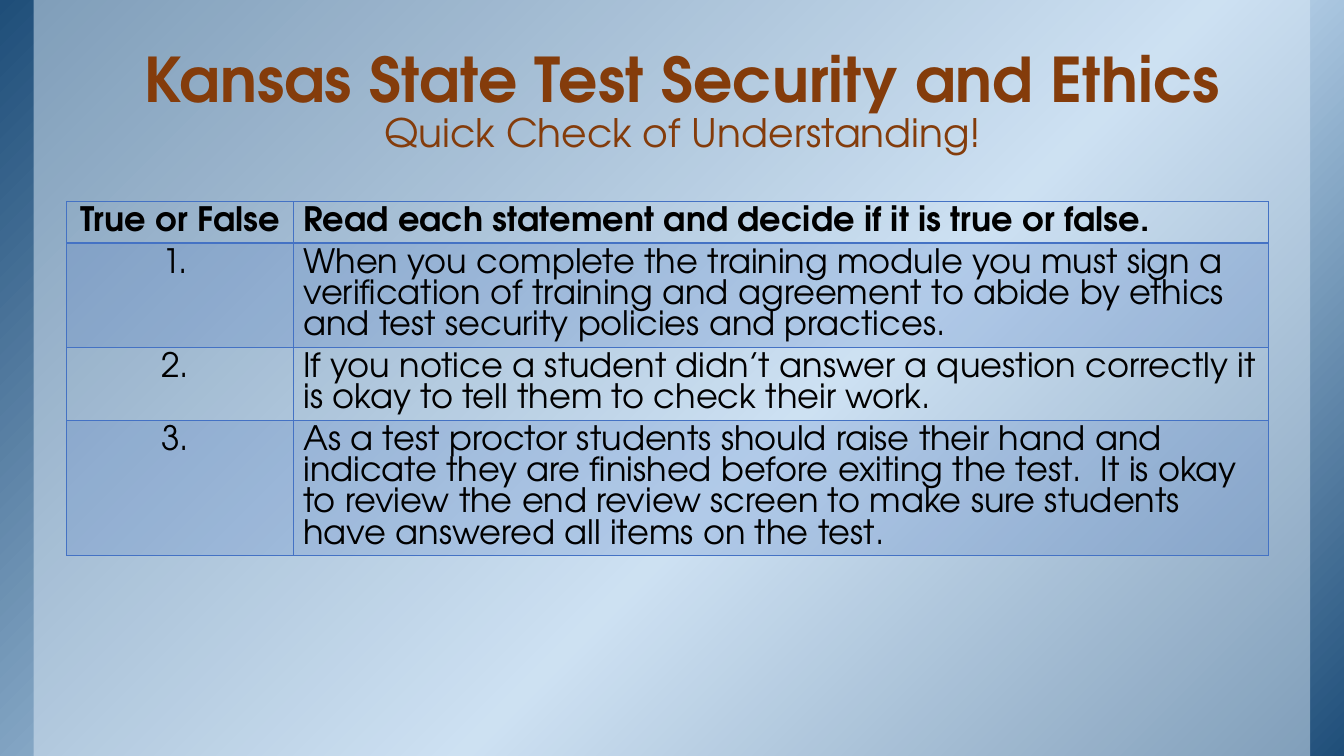
from dataclasses import dataclass

from lxml import etree
from pptx import Presentation
from pptx import util as u
from pptx.dml.color import RGBColor
from pptx.enum import shapes, text
from pptx.oxml import ns


@dataclass(frozen=True)
class Theme:
    font: str = "TeX Gyre Adventor"
    title: str = "843C0B"
    body: str = "000000"
    accent: str = "4472C4"
    panel: str = "DEEBF7"
    gradient: tuple = ((0, "1F4E79"), (58, "BDD7EE"), (100, "1F4E79"))
    title_size: int = 44
    subtitle_size: int = 28
    body_size: int = 24
    body_leading: float = 22.4


THEME = Theme()
HEADER = ("True or False", "Read each statement and decide if it is true or false.")
STATEMENTS = (
    "When you complete the training module you must sign a verification of training "
    "and agreement to abide by ethics and test security policies and practices.",
    "If you notice a student didn’t answer a question correctly it is okay to tell "
    "them to check their work.",
    "As a test proctor students should raise their hand and indicate they are finished "
    "before exiting the test.  It is okay to review the end review screen to make sure "
    "students have answered all items on the test.",
)
ROW_HEIGHTS = (1.05, 2.62, 1.83, 3.41)


def add_run(p, words, size, color, bold=False):
    r = p.add_run()
    r.text = words
    r.font.name = THEME.font
    r.font.size = u.Pt(size)
    r.font.bold = bold
    r.font.color.rgb = RGBColor.from_string(color)


def sub(parent, tag, **attrs):
    return etree.SubElement(parent, ns.qn(tag), attrs)


def set_alpha(fill_parent, percent):
    color = fill_parent.find(".//" + ns.qn("a:srgbClr"))
    sub(color, "a:alpha", val=str(percent * 1000))


def add_rect(s, left, top, width, height):
    sp = s.shapes.add_shape(shapes.MSO_SHAPE.RECTANGLE, u.Cm(left), u.Cm(top),
                            u.Cm(width), u.Cm(height))
    sp.shadow.inherit = False
    sp.line.fill.background()
    return sp


def add_backdrop(s, left, top, width, height):
    # Diagonal gradient
    sp = add_rect(s, left, top, width, height)
    sp.fill.gradient()
    sp.fill.gradient_angle = 315
    stops = sp.element.spPr.find(".//" + ns.qn("a:gsLst"))
    for stop in list(stops):
        stops.remove(stop)
    for position, color in THEME.gradient:
        stop = sub(stops, "a:gs", pos=str(position * 1000))
        sub(stop, "a:srgbClr", val=color)

    # Translucent panel between the side bands
    side = 0.85
    panel = add_rect(s, left + side, top, width - 2 * side, height)
    panel.fill.solid()
    panel.fill.fore_color.rgb = RGBColor.from_string(THEME.panel)
    set_alpha(panel.element.spPr, 50)


def add_title(s, left, top, width, height):
    box = s.shapes.add_textbox(u.Cm(left), u.Cm(top), u.Cm(width), u.Cm(height))
    tf = box.text_frame
    tf.word_wrap = True
    tf.vertical_anchor = text.MSO_ANCHOR.BOTTOM
    tf.margin_left = tf.margin_right = u.Cm(0.33)
    tf.margin_top = tf.margin_bottom = u.Cm(0.17)
    p = tf.paragraphs[0]
    p.alignment = text.PP_ALIGN.CENTER
    p.line_spacing = 0.85
    add_run(p, "Kansas State Test Security and Ethics", THEME.title_size, THEME.title, True)
    p.add_line_break()
    add_run(p, "Quick Check of Understanding!", THEME.subtitle_size, THEME.title)


def set_borders(cell, bottom):
    tc_pr = cell._tc.get_or_add_tcPr()
    widths = (("a:lnL", 1), ("a:lnR", 1), ("a:lnT", 1), ("a:lnB", bottom))
    for index, (tag, width) in enumerate(widths):
        line = sub(tc_pr, tag, w=str(u.Pt(width)))
        sub(sub(line, "a:solidFill"), "a:srgbClr", val=THEME.accent)
        tc_pr.insert(index, line)


def fill_cell(cell, words, row, col):
    p = cell.text_frame.paragraphs[0]
    p.alignment = text.PP_ALIGN.LEFT if col else text.PP_ALIGN.CENTER
    p.line_spacing = u.Pt(THEME.body_leading)
    add_run(p, words, THEME.body_size, THEME.body, bold=row == 0)
    if row % 2:
        cell.fill.solid()
        cell.fill.fore_color.rgb = RGBColor.from_string(THEME.accent)
        set_alpha(cell._tc.tcPr, 20)
    else:
        cell.fill.background()
    set_borders(cell, bottom=1 if row else 2)


def add_quiz(s, left, top, width, first_column):
    rows = [HEADER] + [(f"{n}. ", words) for n, words in enumerate(STATEMENTS, 1)]
    table = s.shapes.add_table(len(rows), 2, u.Cm(left), u.Cm(top), u.Cm(width),
                               u.Cm(sum(ROW_HEIGHTS))).table
    table.first_row = table.horz_banding = False
    table.columns[0].width = u.Cm(first_column)
    table.columns[1].width = u.Cm(width - first_column)
    for row, (height, entries) in enumerate(zip(ROW_HEIGHTS, rows)):
        table.rows[row].height = u.Cm(height)
        for col, words in enumerate(entries):
            fill_cell(table.cell(row, col), words, row, col)


def main():
    prs = Presentation()
    prs.slide_width, prs.slide_height = u.Cm(33.87), u.Cm(19.05)
    s = prs.slides.add_slide(prs.slide_layouts[6])
    add_backdrop(s, 0, 0, 33.87, 19.05)
    add_title(s, 3.1, 0.2, 28.22, 3.89)
    add_quiz(s, 1.68, 5.08, 30.28, 5.71)
    prs.save("out.pptx")


if __name__ == "__main__":
    main()
